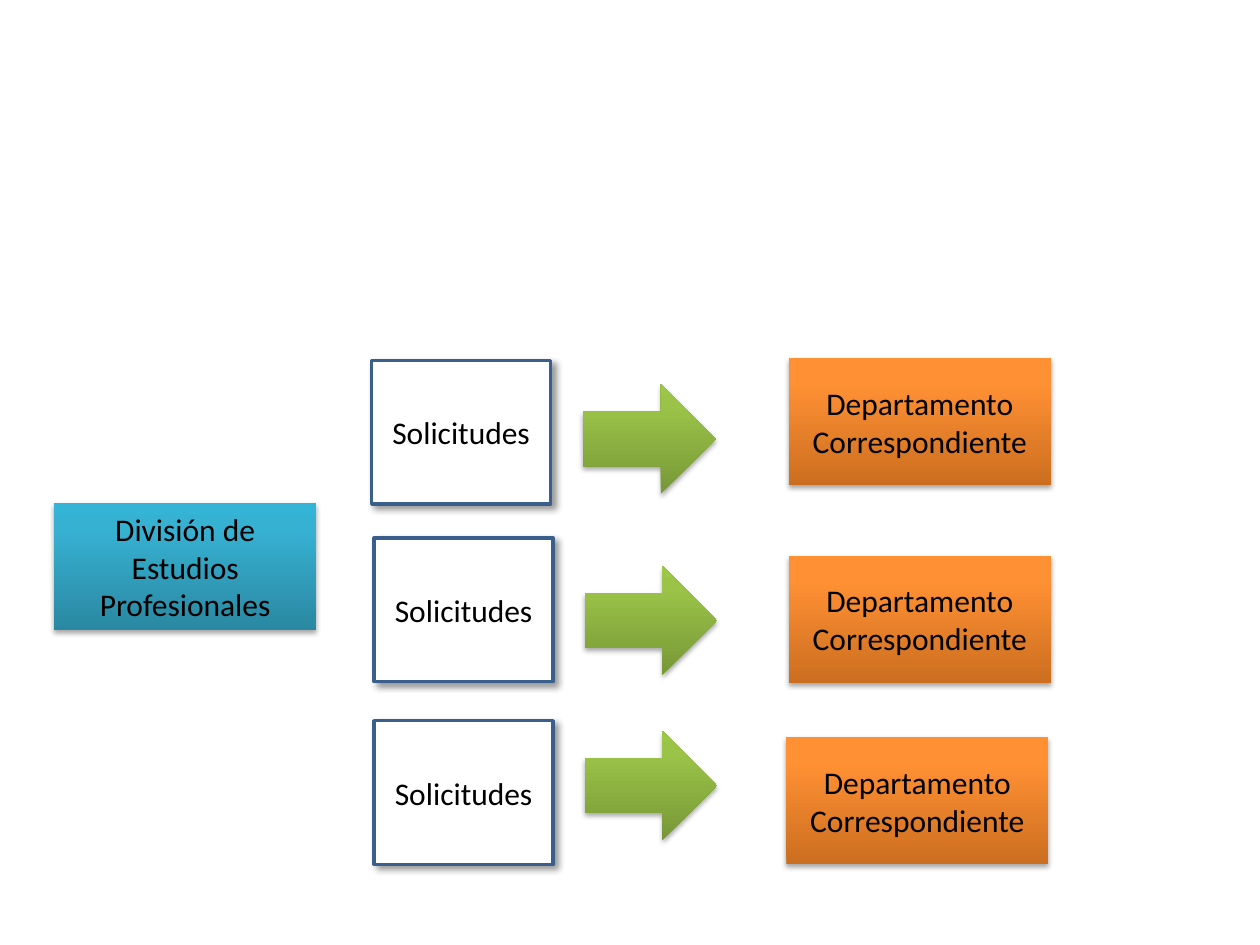
from dataclasses import dataclass

from lxml.etree import SubElement
from pptx import Presentation
from pptx.dml.color import RGBColor
from pptx.enum.shapes import MSO_SHAPE
from pptx.enum.text import MSO_ANCHOR, PP_ALIGN
from pptx.oxml.ns import qn
from pptx.shapes.autoshape import Shape
from pptx.slide import Slide
from pptx.util import Inches, Pt

COLUMNS, ROWS = 1000, 750
SLIDE_WIDTH, SLIDE_HEIGHT = Inches(10), Inches(7.5)

COLORS = {
    "paper": "FFFFFF",
    "outline": "3A5F8C",
    "text": "000000",
    "shadow": "000000",
}
GRADIENTS = {
    "division": {0: "2A88A2", 80: "37B1D2", 100: "34B4D6"},
    "arrow": {0: "779737", 80: "9BC348", 100: "9DC746"},
    "department": {0: "CC6E20", 80: "FF9034", 100: "FF9136"},
}
FONT_FORMAT = {"name": "Calibri", "size": Pt(18)}
FRAME_FORMAT = {"word_wrap": True, "vertical_anchor": MSO_ANCHOR.MIDDLE}


@dataclass(frozen=True)
class Shadow:
    opacity: int
    blur: float
    distance: float
    direction: int


@dataclass(frozen=True)
class Block:
    preset: MSO_SHAPE
    columns: int
    rows: int
    shadow: Shadow
    gradient: str = ""
    text: str = ""


@dataclass(frozen=True)
class Place:
    column: int
    row: int


SOFT_SHADOW = Shadow(35, 3.1, 1.8, 90)
CORNER_SHADOW = Shadow(40, 4, 3, 45)

DIVISION = Block(MSO_SHAPE.RECTANGLE, 208, 101, SOFT_SHADOW, "division",
                 "División de Estudios Profesionales")
REQUEST = Block(MSO_SHAPE.FLOWCHART_PROCESS, 142, 114, CORNER_SHADOW,
                text="Solicitudes")
ARROW = Block(MSO_SHAPE.RIGHT_ARROW, 105, 87, SOFT_SHADOW, "arrow")
DEPARTMENT = Block(MSO_SHAPE.RECTANGLE, 208, 101, SOFT_SHADOW, "department",
                   "Departamento Correspondiente")

LAYOUT = {
    DIVISION: [Place(43, 399)],
    REQUEST: [Place(295, 286), Place(297, 427), Place(297, 572)],
    ARROW: [Place(463, 305), Place(464, 449), Place(464, 580)],
    DEPARTMENT: [Place(626, 284), Place(626, 441), Place(624, 585)],
}


def across(columns: int) -> int:
    return round(SLIDE_WIDTH * columns / COLUMNS)


def down(rows: int) -> int:
    return round(SLIDE_HEIGHT * rows / ROWS)


def fill_gradient(shape: Shape, stops: dict[int, str]) -> None:
    shape.fill.gradient()
    shape.fill.gradient_angle = 90
    stop_list = shape.element.spPr.find(qn("a:gradFill")).find(qn("a:gsLst"))
    for stop in list(stop_list):
        stop_list.remove(stop)
    for position, color in stops.items():
        stop = SubElement(stop_list, qn("a:gs"), pos=str(position * 1000))
        SubElement(stop, qn("a:srgbClr"), val=color)
    shape.line.fill.background()


def fill_paper(shape: Shape) -> None:
    shape.fill.solid()
    shape.fill.fore_color.rgb = RGBColor.from_string(COLORS["paper"])
    shape.line.color.rgb = RGBColor.from_string(COLORS["outline"])
    shape.line.width = Pt(2)


def cast_shadow(shape: Shape, shadow: Shadow) -> None:
    shape.shadow.inherit = False
    effects = shape.element.spPr.find(qn("a:effectLst"))
    outer = SubElement(effects, qn("a:outerShdw"), blurRad=str(Pt(shadow.blur)),
                       dist=str(Pt(shadow.distance)),
                       dir=str(shadow.direction * 60000), rotWithShape="0")
    color = SubElement(outer, qn("a:srgbClr"), val=COLORS["shadow"])
    SubElement(color, qn("a:alpha"), val=str(shadow.opacity * 1000))


def write_text(shape: Shape, text: str) -> None:
    frame = shape.text_frame
    for name, value in FRAME_FORMAT.items():
        setattr(frame, name, value)
    para = frame.paragraphs[0]
    para.alignment = PP_ALIGN.CENTER
    span = para.add_run()
    span.text = text
    for name, value in FONT_FORMAT.items():
        setattr(span.font, name, value)
    span.font.color.rgb = RGBColor.from_string(COLORS["text"])


def draw_block(page: Slide, block: Block, place: Place) -> None:
    shape = page.shapes.add_shape(block.preset, across(place.column), down(place.row),
                                  across(block.columns), down(block.rows))
    if block.gradient:
        fill_gradient(shape, GRADIENTS[block.gradient])
    else:
        fill_paper(shape)
    cast_shadow(shape, block.shadow)
    if block.text:
        write_text(shape, block.text)


def main() -> None:
    deck = Presentation()
    deck.slide_width, deck.slide_height = SLIDE_WIDTH, SLIDE_HEIGHT
    page = deck.slides.add_slide(deck.slide_layouts[6])
    for block, places in LAYOUT.items():
        for place in places:
            draw_block(page, block, place)
    deck.save("out.pptx")


if __name__ == "__main__":
    main()
